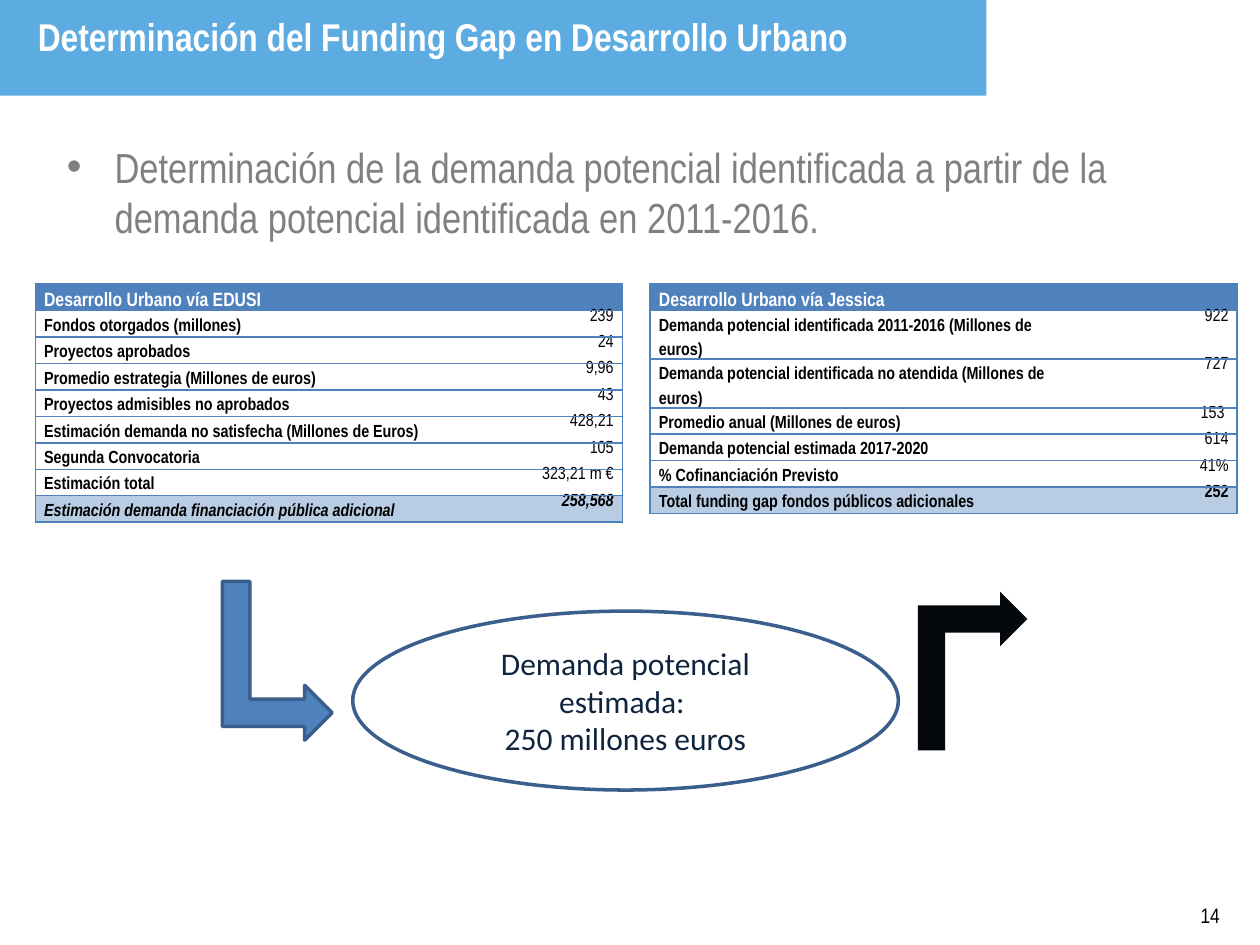
"""Build the slide on the funding gap in urban development."""
from dataclasses import dataclass

from lxml import etree
from pptx import Presentation
from pptx.dml.color import RGBColor
from pptx.enum.shapes import MSO_SHAPE
from pptx.enum.text import MSO_ANCHOR, MSO_AUTO_SIZE, PP_ALIGN
from pptx.oxml.ns import qn
from pptx.util import Inches, Pt

RECT, OVAL, BENT = MSO_SHAPE.RECTANGLE, MSO_SHAPE.OVAL, MSO_SHAPE.BENT_UP_ARROW
TOP, MIDDLE = MSO_ANCHOR.TOP, MSO_ANCHOR.MIDDLE
LEFT, RIGHT = PP_ALIGN.LEFT, PP_ALIGN.RIGHT
CENTER, JUSTIFY = PP_ALIGN.CENTER, PP_ALIGN.JUSTIFY

SKY = RGBColor(0x5C, 0xAC, 0xE2)
BLUE = RGBColor(0x4F, 0x81, 0xBD)
PALE = RGBColor(0xB8, 0xCC, 0xE4)
STEEL = RGBColor(0x3A, 0x5F, 0x8C)
NAVY = RGBColor(0x0F, 0x24, 0x3E)
GRAY = RGBColor(0x80, 0x80, 0x80)
WHITE = RGBColor(0xFF, 0xFF, 0xFF)
BLACK = RGBColor(0, 0, 0)
INK = RGBColor(0x04, 0x07, 0x0B)
NARROW, ROUND = "Arial Narrow", "Calibri"


@dataclass
class Face:
    size: float
    color: RGBColor
    bold: bool = False
    italic: bool = False
    name: str = NARROW


@dataclass
class Panel:
    left: float
    head: str
    rows: list[tuple[str, str]]
    slant: bool = False


@dataclass
class Arrow:
    left: float
    top: float
    fill: RGBColor
    line: RGBColor | None
    flip: bool = False


PANELS = [
    Panel(5.16, "Desarrollo Urbano vía Jessica", [
        ("Demanda potencial identificada 2011-2016 (Millones de euros)", "922"),
        ("Demanda potencial identificada no atendida (Millones de euros)", "727"),
        ("Promedio anual (Millones de euros)", "153 "),
        ("Demanda potencial estimada 2017-2020", "614"),
        ("% Cofinanciación Previsto", "41%"),
        ("Total funding gap fondos públicos adicionales", "252"),
    ]),
    Panel(0.28, "Desarrollo Urbano vía EDUSI", [
        ("Fondos otorgados (millones)", "239"),
        ("Proyectos aprobados", "24"),
        ("Promedio estrategia (Millones de euros)", "9,96"),
        ("Proyectos admisibles no aprobados", "43"),
        ("Estimación demanda no satisfecha (Millones de Euros)", "428,21"),
        ("Segunda Convocatoria", "105"),
        ("Estimación total", "323,21 m €"),
        ("Estimación demanda financiación pública adicional", "258,568"),
    ], slant=True),
]
ARROWS = [Arrow(1.57, 4.81, BLUE, STEEL), Arrow(7.09, 4.89, INK, None, True)]


def write(par, text: str, face: Face, align=LEFT) -> None:
    """Add one styled run to a paragraph."""
    par.alignment = align
    run = par.add_run()
    run.text = text
    font = run.font
    font.name, font.size = face.name, Pt(face.size)
    font.bold, font.italic = face.bold, face.italic
    font.color.rgb = face.color


def place(shape, left: float, top: float, width: float, height: float) -> None:
    """Set the frame of a shape."""
    shape.left, shape.top = Inches(left), Inches(top)
    shape.width, shape.height = Inches(width), Inches(height)


def fit(shape, anchor):
    """Make the text wrap without resizing and return its frame."""
    frame = shape.text_frame
    frame.word_wrap = True
    frame.auto_size = MSO_AUTO_SIZE.NONE
    frame.vertical_anchor = anchor
    return frame


def draw(slide, kind, box: tuple, fill: RGBColor, line: RGBColor | None = None):
    """Add a flat preset shape."""
    shape = slide.shapes.add_shape(kind, *map(Inches, box))
    shape.shadow.inherit = False
    shape.fill.solid()
    shape.fill.fore_color.rgb = fill
    if line is None:
        shape.line.fill.background()
    else:
        shape.line.color.rgb = line
        shape.line.width = Pt(2)
    return shape


def edge(cell, sides: str) -> None:
    """Rule the named sides of a cell and clear the others."""
    props = cell._tc.get_or_add_tcPr()
    for side in "LRTB":
        rule = etree.SubElement(props, qn(f"a:ln{side}"), w=str(Pt(1)))
        if side in sides:
            fill = etree.SubElement(rule, qn("a:solidFill"))
            etree.SubElement(fill, qn("a:srgbClr"), val=str(BLUE))
        else:
            etree.SubElement(rule, qn("a:noFill"))


def fill_cell(cell, text: str, face: Face, sides: str, fill: RGBColor | None,
              align=LEFT, space: float = 1.5) -> None:
    """Write, rule and colour one table cell."""
    cell.margin_left = cell.margin_right = Inches(0.07)
    cell.margin_top = cell.margin_bottom = 0
    edge(cell, sides)
    if fill is None:
        cell.fill.background()
    else:
        cell.fill.solid()
        cell.fill.fore_color.rgb = fill
    par = cell.text_frame.paragraphs[0]
    par.line_spacing = space
    write(par, text, face, align)


def add_panel(slide, panel: Panel) -> None:
    """Add a table with a merged head and a tinted last row."""
    count = len(panel.rows) + 1
    grid = slide.shapes.add_table(count, 2, Inches(panel.left), Inches(2.25),
                                  Inches(4.66), Inches(0.21 * count)).table
    grid.first_row = grid.horz_banding = False
    grid.columns[0].width, grid.columns[1].width = Inches(3.42), Inches(1.24)
    for row in grid.rows:
        row.height = Inches(0.21)
    grid.cell(0, 0).merge(grid.cell(0, 1))
    edge(grid.cell(0, 1), "RTB")
    fill_cell(grid.cell(0, 0), panel.head, Face(11, WHITE, True), "LRTB", BLUE)
    for i, (label, value) in enumerate(panel.rows, 1):
        last = i == count - 1
        tint = PALE if last else None
        slant = last and panel.slant
        fill_cell(grid.cell(i, 0), label, Face(10, BLACK, True, slant), "LTB", tint)
        fill_cell(grid.cell(i, 1), value, Face(10, BLACK, last, slant), "RTB",
                  tint, RIGHT, 0.8)


def add_arrow(slide, arrow: Arrow) -> None:
    """Add a bent arrow that ends pointing right."""
    shape = draw(slide, BENT, (arrow.left, arrow.top, 1.26, 0.87),
                 arrow.fill, arrow.line)
    shape.rotation = 90
    if arrow.flip:
        shape._element.spPr.xfrm.set("flipH", "1")


def main() -> None:
    """Build and save the slide."""
    deck = Presentation()
    deck.slide_width, deck.slide_height = Inches(10), Inches(7.5)
    slide = deck.slides.add_slide(deck.slide_layouts[1])

    band = draw(slide, RECT, (0, 0, 7.83, 0.76), SKY)
    slide.shapes._spTree.insert(2, band._element)
    title, body = slide.placeholders
    place(title, 0.2, 0.05, 7, 0.63)
    write(fit(title, TOP).paragraphs[0],
          "Determinación del Funding Gap en Desarrollo Urbano",
          Face(22.1, WHITE, True), JUSTIFY)

    place(body, 0.43, 1.07, 9.07, 5.89)
    par = fit(body, TOP).paragraphs[0]
    props = par._p.get_or_add_pPr()
    props.set("marL", str(Inches(0.38)))
    props.set("indent", str(-Inches(0.38)))
    etree.SubElement(props, qn("a:buChar"), char="•")
    par.space_before = Pt(0)
    write(par, "Determinación de la demanda potencial identificada a partir de la "
          "demanda potencial identificada en 2011-2016.", Face(24, GRAY))

    for panel in PANELS:
        add_panel(slide, panel)

    oval = draw(slide, OVAL, (2.8, 4.85, 4.33, 1.42), WHITE, STEEL)
    frame = fit(oval, MIDDLE)
    face = Face(18, NAVY, name=ROUND)
    write(frame.paragraphs[0], "Demanda potencial estimada: ", face, CENTER)
    write(frame.add_paragraph(), "250 millones euros", face, CENTER)
    for arrow in ARROWS:
        add_arrow(slide, arrow)

    page = slide.shapes.add_textbox(*map(Inches, (9.33, 7.14, 0.55, 0.24)))
    write(fit(page, MIDDLE).paragraphs[0], "14", Face(12, BLACK), CENTER)
    deck.save("out.pptx")


if __name__ == "__main__":
    main()
